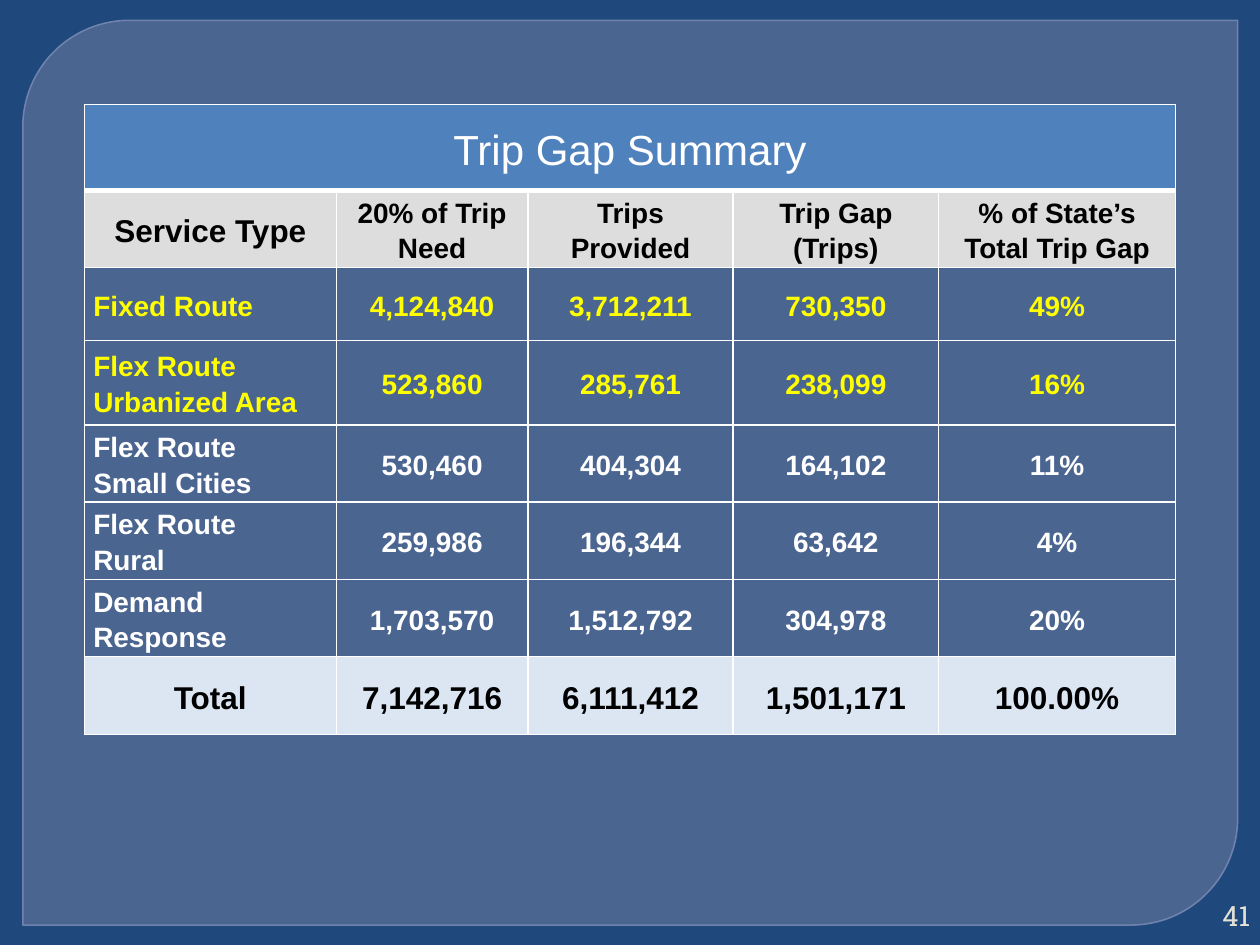
import pptx
import pptx.util
import pptx.dml.color
import pptx.enum.shapes
import pptx.enum.text
import pptx.oxml
import pptx.oxml.ns
from pptx.util import Cm, Pt

TITLE = "Trip Gap Summary"
HEADINGS = ["Service Type", "20% of Trip Need", "Trips Provided",
            "Trip Gap (Trips)", "% of State’s Total Trip Gap"]
SERVICES = [
    ["Fixed Route", "4,124,840", "3,712,211", "730,350", "49%"],
    ["Flex Route Urbanized Area", "523,860", "285,761", "238,099", "16%"],
    ["Flex Route\nSmall Cities", "530,460", "404,304", "164,102", "11%"],
    ["Flex Route\nRural", "259,986", "196,344", "63,642", "4%"],
    ["Demand Response", "1,703,570", "1,512,792", "304,978", "20%"],
]
TOTAL = ["Total", "7,142,716", "6,111,412", "1,501,171", "100.00%"]
PAGE_NUMBER = "41"
HIGHLIGHTED = 2

COLUMN_WIDTHS = [5.08, 3.86, 4.14, 4.14, 4.78]
ROW_HEIGHTS = [1.73, 1.55, 1.47, 1.7, 1.55, 1.55, 1.55, 1.57]
WHITE, BLACK, YELLOW = "FFFFFF", "000000", "FFFF00"
ALIGN = pptx.enum.text.PP_ALIGN
MIDDLE = pptx.enum.text.MSO_ANCHOR.MIDDLE


def rgb(color):
    return pptx.dml.color.RGBColor.from_string(color)


def paint(fill, color):
    if color:
        fill.solid()
        fill.fore_color.rgb = rgb(color)
    else:
        fill.background()


def set_opacity(holder, percent):
    color = holder.find(".//" + pptx.oxml.ns.qn("a:srgbClr"))
    alpha = pptx.oxml.parse_xml(
        f'<a:alpha {pptx.oxml.ns.nsdecls("a")} val="{percent * 1000}"/>')
    color.append(alpha)


def set_borders(cell, **widths):
    properties = cell._tc.get_or_add_tcPr()
    for side in "LRTB":
        width = Pt(widths.get(side, 1))
        properties.append(pptx.oxml.parse_xml(
            f'<a:ln{side} {pptx.oxml.ns.nsdecls("a")} w="{width}"><a:solidFill>'
            f'<a:srgbClr val="{WHITE}"/></a:solidFill></a:ln{side}>'))


def write(frame, text, size, color, align, font="Arial", bold=True,
          spacing=None, before=0, after=0):
    frame.text = text
    for paragraph in frame.paragraphs:
        paragraph.alignment = align
        paragraph.line_spacing = spacing
        paragraph.space_before = Pt(before)
        paragraph.space_after = Pt(after)
        paragraph.font.name = font
        paragraph.font.size = Pt(size)
        paragraph.font.bold = bold
        paragraph.font.color.rgb = rgb(color)


def fill_cell(cell, text, size, color, background=None, align=ALIGN.CENTER, **style):
    cell.margin_left = cell.margin_right = Cm(0.18)
    cell.margin_top = cell.margin_bottom = 0
    cell.vertical_anchor = MIDDLE
    write(cell.text_frame, text, size, color, align, spacing=1.15, **style)
    paint(cell.fill, background)


def add_panel(slide):
    panel = slide.shapes.add_shape(
        pptx.enum.shapes.MSO_SHAPE.ROUND_2_DIAG_RECTANGLE,
        Cm(0.46), Cm(0.41), Cm(24.49), Cm(18.24))
    panel.shadow.inherit = False
    panel.adjustments[0], panel.adjustments[1] = 0.118, 0
    paint(panel.fill, "63759D")
    set_opacity(panel._element.spPr.find(pptx.oxml.ns.qn("a:solidFill")), 65)
    panel.line.color.rgb = rgb("7989B3")
    panel.line.width = Pt(0.87)
    set_opacity(panel._element.spPr.find(pptx.oxml.ns.qn("a:ln")), 88)


def add_page_number(slide):
    box = slide.shapes.add_textbox(Cm(24), Cm(18.08), Cm(1.3), Cm(0.76))
    frame = box.text_frame
    frame.word_wrap = True
    frame.vertical_anchor = MIDDLE
    frame.margin_left = frame.margin_right = Cm(0.1)
    frame.margin_top = frame.margin_bottom = 0
    write(frame, PAGE_NUMBER, 16, "E3E1D7", ALIGN.RIGHT, "Roboto Slab", False)


def add_summary(slide):
    summary = slide.shapes.add_table(
        len(ROW_HEIGHTS), len(COLUMN_WIDTHS), Cm(1.7), Cm(2.11),
        Cm(sum(COLUMN_WIDTHS)), Cm(sum(ROW_HEIGHTS))).table
    summary.first_row = summary.horz_banding = False
    for column, width in zip(summary.columns, COLUMN_WIDTHS):
        column.width = Cm(width)
    for row, height in zip(summary.rows, ROW_HEIGHTS):
        row.height = Cm(height)
    for r, row in enumerate(summary.rows):
        for cell in row.cells:
            set_borders(cell, T=3 if r == 1 else 1, B=3 if r == 0 else 1)

    title = summary.cell(0, 0)
    title.merge(summary.cell(0, len(COLUMN_WIDTHS) - 1))
    fill_cell(title, TITLE, 24, WHITE, "4F81BD", bold=False, before=6, after=6)
    for c, heading in enumerate(HEADINGS):
        fill_cell(summary.cell(1, c), heading, 16 if c else 18, BLACK, "DDDDDD")
    for r, service in enumerate(SERVICES):
        color = YELLOW if r < HIGHLIGHTED else WHITE
        for c, text in enumerate(service):
            fill_cell(summary.cell(r + 2, c), text, 16, color,
                      align=ALIGN.CENTER if c else ALIGN.LEFT)
    for c, text in enumerate(TOTAL):
        fill_cell(summary.cell(len(ROW_HEIGHTS) - 1, c), text, 18, BLACK, "DCE6F2")


def main():
    deck = pptx.Presentation()
    deck.slide_width, deck.slide_height = Cm(25.4), Cm(19.05)
    slide = deck.slides.add_slide(deck.slide_layouts[6])
    paint(slide.background.fill, "1F497D")
    add_panel(slide)
    add_page_number(slide)
    add_summary(slide)
    deck.save("out.pptx")


if __name__ == "__main__":
    main()
